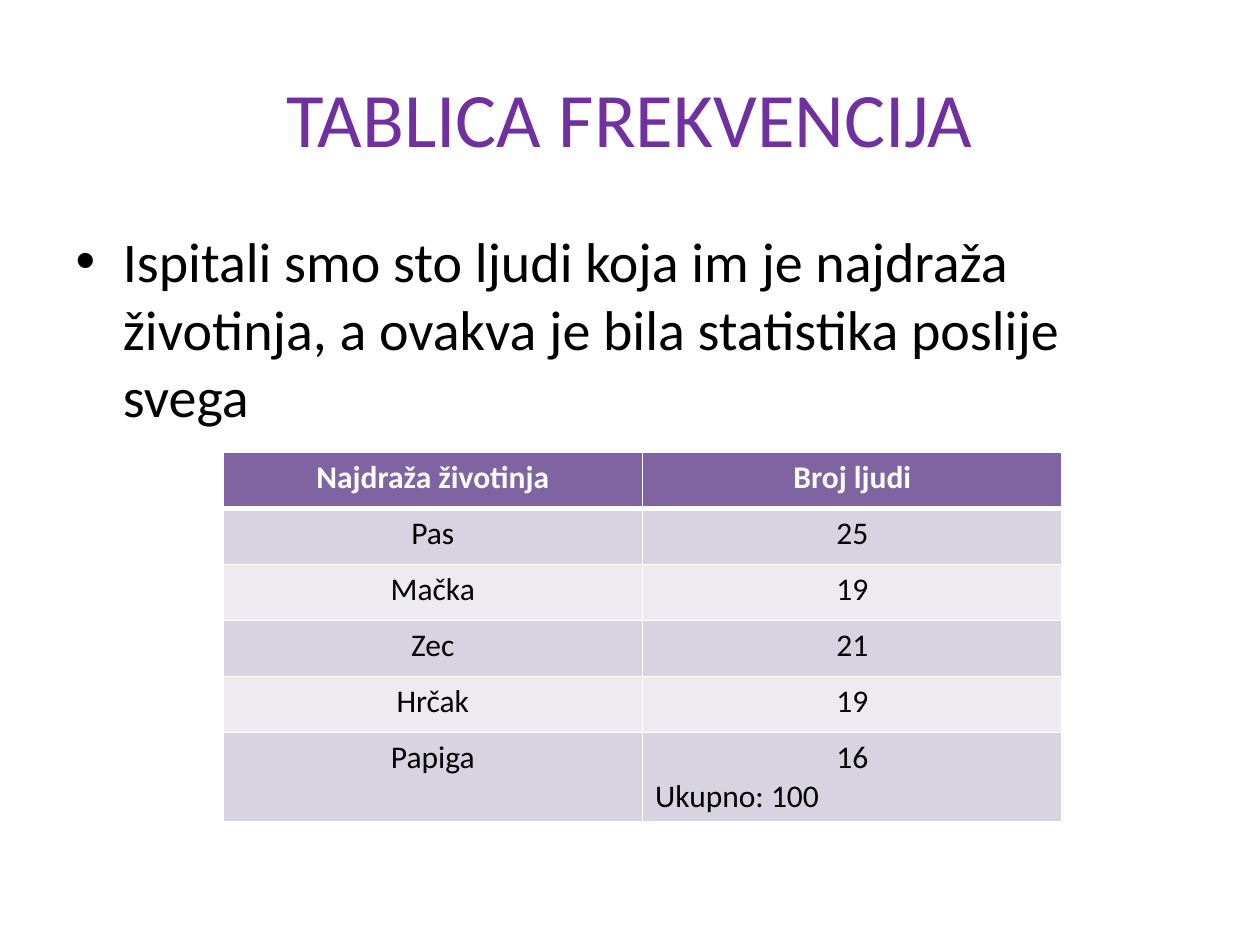
from lxml.etree import SubElement
from pptx import Presentation
from pptx.dml.color import RGBColor
from pptx.enum.text import MSO_ANCHOR, PP_ALIGN
from pptx.oxml.ns import qn
from pptx.util import Inches, Pt

COLORS = {
    "title": "7030A0",
    "text": "000000",
    "white": "FFFFFF",
    "head": "8064A2",
    "dark": "D8D3E0",
    "light": "EDEAF0",
}


def style(par, size, color, bold=False):
    for run in par.runs:
        run.font.name = "Calibri"
        run.font.size = Pt(size)
        run.font.bold = bold
        run.font.color.rgb = RGBColor.from_string(COLORS[color])


def edge(cell, side, width):
    props = cell._tc.get_or_add_tcPr()
    line = SubElement(props, qn(f"a:ln{side}"), w=str(Pt(width)))
    fill = SubElement(line, qn("a:solidFill"))
    SubElement(fill, qn("a:srgbClr"), val=COLORS["white"])


deck = Presentation()
deck.slide_width, deck.slide_height = Inches(10), Inches(7.5)
slide = deck.slides.add_slide(deck.slide_layouts[1])

# Title
title = slide.shapes.title
title.left, title.top = Inches(0.5), Inches(0.3)
title.width, title.height = Inches(9), Inches(1.25)
title.text_frame.text = "TABLICA FREKVENCIJA"
title.text_frame.vertical_anchor = MSO_ANCHOR.MIDDLE
title.text_frame.paragraphs[0].alignment = PP_ALIGN.CENTER
style(title.text_frame.paragraphs[0], 44, "title")

# Bulleted text
body = slide.placeholders[1]
body.left, body.top = Inches(0.5), Inches(1.75)
body.width, body.height = Inches(9), Inches(4.95)
body.text_frame.text = (
    "Ispitali smo sto ljudi koja im je najdraža životinja, "
    "a ovakva je bila statistika poslije svega"
)
style(body.text_frame.paragraphs[0], 32, "text")

# Frequency table
rows = [
    ("Najdraža životinja", "Broj ljudi"),
    ("Pas", "25"),
    ("Mačka", "19"),
    ("Zec", "21"),
    ("Hrčak", "19"),
    ("Papiga", "16\nUkupno: 100"),
]
table = slide.shapes.add_table(
    len(rows), 2, Inches(1.77), Inches(3.59), Inches(6.66), Inches(2.92)
).table
for col in table.columns:
    col.width = Inches(3.33)

for r, row in enumerate(rows):
    head = r == 0
    table.rows[r].height = Inches(0.71 if r == len(rows) - 1 else 0.445)
    shade = "head" if head else "dark" if r % 2 else "light"
    for c, text in enumerate(row):
        cell = table.cell(r, c)
        cell.text_frame.text = text
        for par in cell.text_frame.paragraphs:
            style(par, 18, "white" if head else "text", head)
        cell.text_frame.paragraphs[0].alignment = PP_ALIGN.CENTER
        for side in "LRTB":
            thick = (head and side == "B") or (r == 1 and side == "T")
            edge(cell, side, 3 if thick else 1)
        cell.fill.solid()
        cell.fill.fore_color.rgb = RGBColor.from_string(COLORS[shade])

deck.save("out.pptx")
